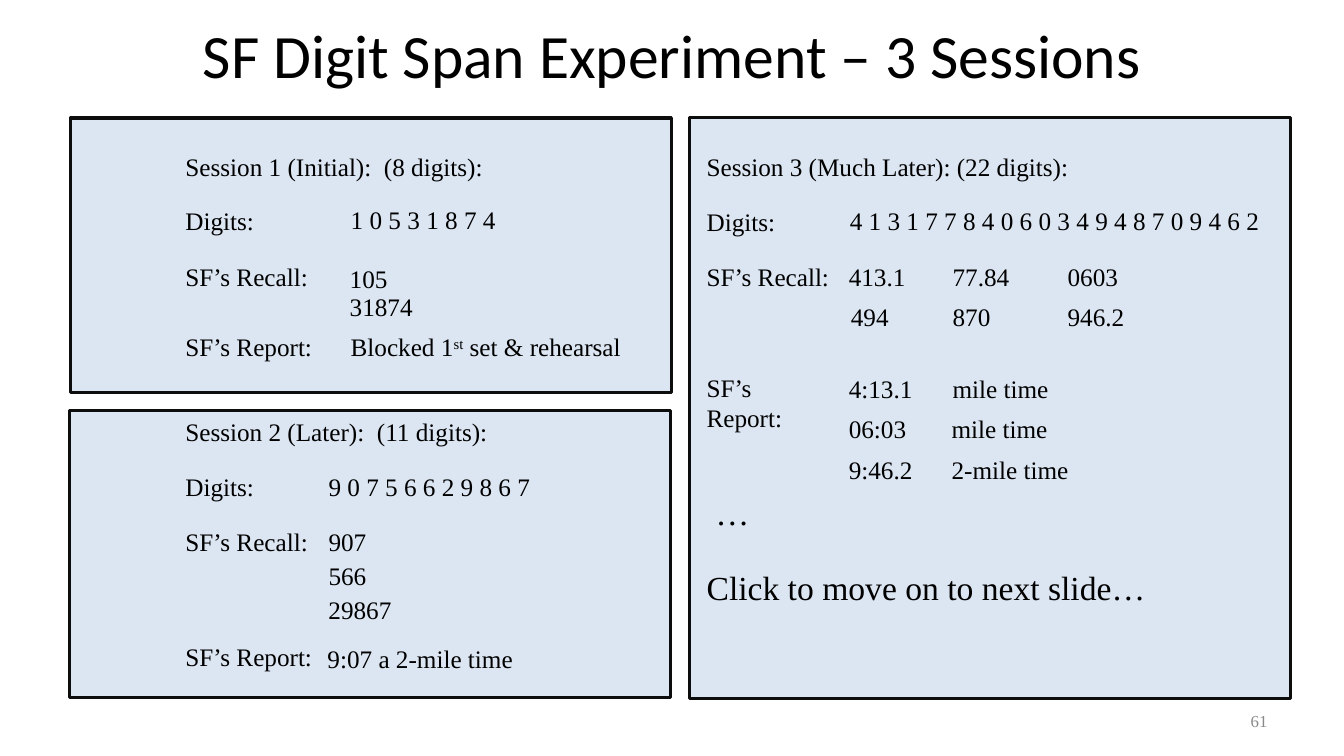
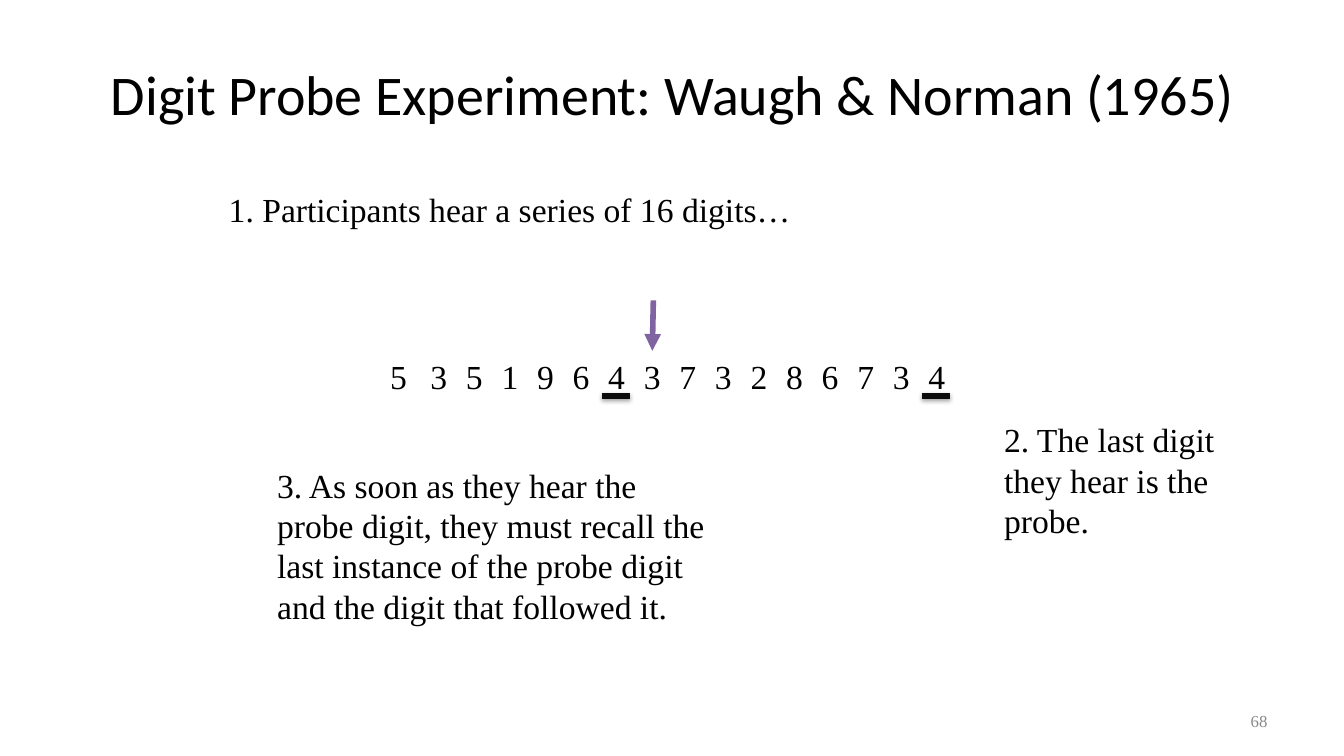
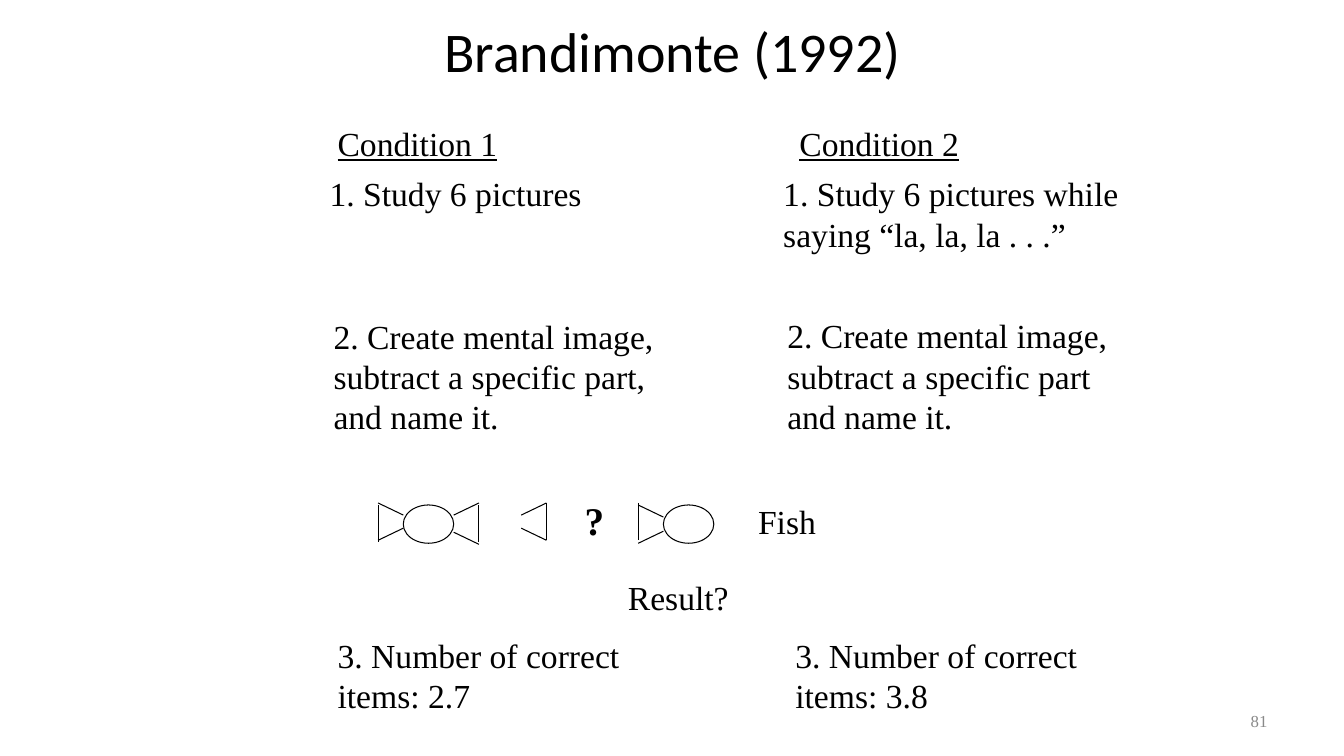
"""Build three slides on digit span, digit probe and mental imagery experiments."""
from lxml import etree
from pptx import Presentation
from pptx import util as u
from pptx.dml.color import RGBColor
from pptx.enum import shapes, text
from pptx.oxml.ns import qn

THEME = {
    "ink": "000000", "panel": "DCE6F2", "edge": "0D0D0D", "arrow": "8064A2", "muted": "898989",
    "head_font": "Calibri", "body_font": "Times New Roman",
    "small": 12, "detail": 18, "body": 24, "mark": 28, "title": 40, "big_title": 44,
}
TITLE = {"font": THEME["head_font"], "align": text.PP_ALIGN.CENTER, "anchor": text.MSO_ANCHOR.MIDDLE}
NUMBER = {"size": THEME["small"], "color": THEME["muted"], "align": text.PP_ALIGN.RIGHT,
          "anchor": text.MSO_ANCHOR.MIDDLE}
NUMBER_BOX = (9.56, 6.95, 3.11, 0.4)

PANELS = [(6.84, 1.17, 5.96, 5.76), (0.69, 4.07, 5.96, 2.85), (0.7, 1.17, 5.96, 2.72)]
LABEL_WIDTHS = {"Digits:": 0.89, "SF’s Recall:": 1.43, "SF’s Report:": 1.47}
SESSIONS = [
    {"left": 1.74, "top": 1.45, "width": 3.18, "name": "Session 1 (Initial):  (8 digits):",
     "labels": [(1.99, "Digits:"), (2.54, "SF’s Recall:"), (3.24, "SF’s Report:")],
     "values": [
         (3.38, 1.98, 1.65, "1 0 5 3 1 8 7 4"),
         (3.37, 2.56, 0.59, "105"),
         (3.37, 2.84, 0.84, "31874"),
         (3.38, 3.24, 2.91, ["Blocked 1", ("st", 30), " set & rehearsal"])]},
    {"left": 1.74, "top": 4.08, "width": 3.23, "name": "Session 2 (Later):  (11 digits):",
     "labels": [(4.63, "Digits:"), (5.17, "SF’s Recall:"), (6.31, "SF’s Report:")],
     "values": [
         (3.16, 4.63, 2.22, "9 0 7 5 6 6 2 9 8 6 7"),
         (3.16, 5.17, 0.59, "907"),
         (3.16, 5.51, 0.59, "566"),
         (3.16, 5.85, 0.84, "29867"),
         (3.15, 6.33, 2.07, "9:07 a 2-mile time")]},
    {"left": 6.91, "top": 1.45, "width": 3.83, "name": "Session 3 (Much Later): (22 digits):",
     "labels": [(2, "Digits:"), (2.54, "SF’s Recall:")],
     "values": [
         (8.33, 1.99, 4.3, "4 1 3 1 7 7 8 4 0 6 0 3 4 9 4 8 7 0 9 4 6 2"),
         (8.32, 2.54, 0.78, "413.1"), (9.35, 2.54, 0.78, "77.84"), (10.49, 2.54, 0.71, "0603"),
         (8.34, 2.94, 0.59, "494"), (9.35, 2.94, 0.59, "870"), (10.49, 2.94, 0.78, "946.2"),
         (8.32, 3.65, 0.85, "4:13.1"), (9.35, 3.65, 1.17, "mile time"),
         (8.32, 4.05, 0.78, "06:03"), (9.34, 4.05, 1.17, "mile time"),
         (8.32, 4.46, 0.85, "9:46.2"), (9.34, 4.46, 1.38, "2-mile time")]},
]
WRAPPED_REPORT = ((6.91, 3.64, 1.4, 0.71), "SF’s Report:")
SESSION_NOTES = [
    ((6.91, 5.58, 5.08, 0.5), "Click to move on to next slide…"),
    ((7, 4.83, 0.5, 0.5), "…"),
]

DIGITS = "5351964373286734"
PROBES = (6, 15)
PROBE_STEPS = [
    ((2.17, 1.83, 9.42, 0.5), "1. Participants hear a series of 16 digits…"),
    ((9.86, 4.11, 2.36, 1.31), "2. The last digit they hear is the probe."),
    ((2.65, 4.56, 4.51, 1.72), "3. As soon as they hear the probe digit, they must recall the "
                               "last instance of the probe digit and the digit that followed it."),
]

CONDITION_STEPS = [
    ((3.17, 1.67, 3.08, 1.08), "1. Study 6 pictures"),
    ((7.67, 1.67, 3.66, 1.08), "1. Study 6 pictures while saying “la, la, la . . .”"),
    ((3.21, 3.08, 3.54, 1.42), "2. Create mental image, subtract a specific part, and name it."),
    ((7.71, 3.08, 3.38, 1.5), "2. Create mental image, subtract a specific part and name it."),
    ((3.25, 6.25, 3.38, 0.92), "3. Number of correct items: 2.7"),
    ((7.79, 6.25, 3.38, 0.83), "3. Number of correct items: 3.8"),
]
CONDITIONS = [((3.25, 1.17, 2.58, 0.5), "Condition 1"), ((7.83, 1.17, 2.58, 0.5), "Condition 2")]
SHORT_LABELS = [
    ((5.7, 4.87, 0.4, 0.57), "?", {"size": THEME["mark"], "bold": True}),
    ((7.42, 4.92, 0.78, 0.5), "Fish", {}),
    ((6.13, 5.67, 1.2, 0.5), "Result?", {}),
]
FIGURES = [
    {"bodies": [4], "wings": [(3.75, 0.25, (5.01, 5.38), (4.99, 5.36)),
                              (4.75, -0.25, (5.01, 5.38), (4.99, 5.4))]},
    {"bodies": [], "wings": [(5.42, -0.25, (4.99, 5.36), (4.99, 5.36))]},
    {"bodies": [6.58], "wings": [(6.33, 0.25, (4.99, 5.36), (5.01, 5.39))]},
]


def inches(values):
    return [u.Inches(v) for v in values]


def add_text(slide, box, content, size=THEME["body"], font=THEME["body_font"], color=THEME["ink"],
             align=text.PP_ALIGN.LEFT, anchor=text.MSO_ANCHOR.TOP, wrap=True, **extra):
    tf = slide.shapes.add_textbox(*inches(box)).text_frame
    fit = text.MSO_AUTO_SIZE.NONE if wrap else text.MSO_AUTO_SIZE.SHAPE_TO_FIT_TEXT
    for name, value in {"word_wrap": wrap, "auto_size": fit, "vertical_anchor": anchor}.items():
        setattr(tf, name, value)
    p = tf.paragraphs[0]
    p.alignment = align
    for part in [content] if isinstance(content, str) else content:
        words, raised = (part, 0) if isinstance(part, str) else part
        r = p.add_run()
        r.text = words
        for name, value in {"size": u.Pt(size), "name": font, **extra}.items():
            setattr(r.font, name, value)
        r.font.color.rgb = RGBColor.from_string(color)
        if raised:
            r.font._element.set("baseline", str(raised * 1000))


def add_shape(parent, kind, box, fill, line, weight):
    sp = parent.shapes.add_shape(kind, *inches(box))
    sp.shadow.inherit = False
    if fill:
        sp.fill.solid()
        sp.fill.fore_color.rgb = RGBColor.from_string(fill)
    else:
        sp.fill.background()
    sp.line.color.rgb = RGBColor.from_string(line)
    sp.line.width = u.Pt(weight)
    return sp


def add_line(parent, start, end, color=THEME["ink"], weight=0.75, arrow=False):
    sp = parent.shapes.add_connector(shapes.MSO_CONNECTOR.STRAIGHT, *inches(start + end))
    sp.line.color.rgb = RGBColor.from_string(color)
    sp.line.width = u.Pt(weight)
    if arrow:
        etree.SubElement(sp.line._get_or_add_ln(), qn("a:tailEnd"), type="triangle")
    etree.SubElement(sp._element.spPr, qn("a:effectLst"))


def add_soft_shadow(sp):
    effects = sp._element.spPr.find(qn("a:effectLst"))
    shadow = etree.SubElement(effects, qn("a:outerShdw"), blurRad=str(u.Pt(3.1)),
                              dist=str(u.Pt(1.8)), dir="5400000", rotWithShape="0")
    color = etree.SubElement(shadow, qn("a:srgbClr"), val=THEME["ink"])
    etree.SubElement(color, qn("a:alpha"), val="35000")


def new_slide(prs, title, box, size, number):
    slide = prs.slides.add_slide(prs.slide_layouts[6])
    add_text(slide, box, title, size=size, **TITLE)
    add_text(slide, NUMBER_BOX, number, **NUMBER)
    return slide


def build_span(prs):
    slide = new_slide(prs, "SF Digit Span Experiment – 3 Sessions", (0.92, 0.09, 11.5, 0.89),
                      THEME["big_title"], "61")
    for box in PANELS:
        add_shape(slide, shapes.MSO_SHAPE.RECTANGLE, box, THEME["panel"], THEME["edge"], 2.25)
    for session in SESSIONS:
        left = session["left"]
        cells = [(left, session["top"], session["width"], session["name"])]
        cells += [(left, y, LABEL_WIDTHS[label], label) for y, label in session["labels"]]
        for x, y, width, words in cells + session["values"]:
            add_text(slide, (x, y, width, 0.4), words, size=THEME["detail"], wrap=False)
    add_text(slide, *WRAPPED_REPORT, size=THEME["detail"])
    for box, words in SESSION_NOTES:
        add_text(slide, box, words)


def build_probe(prs):
    slide = new_slide(prs, "Digit Probe Experiment: Waugh & Norman (1965)", (0.67, 0.3, 12, 1.25),
                      THEME["title"], "68")
    pitch = (9.11 - 4.17) / 14
    lefts = [3.77] + [4.17 + i * pitch for i in range(len(DIGITS) - 1)]
    for left, digit in zip(lefts, DIGITS):
        add_text(slide, (left, 3.48, 0.75, 0.5), digit)
    for i in PROBES:
        bar = add_shape(slide, shapes.MSO_SHAPE.RECTANGLE, (lefts[i] + 0.04, 3.9, 0.27, 0.05),
                        THEME["edge"], THEME["edge"], 0.75)
        add_soft_shadow(bar)
    add_line(slide, (6.48, 2.98), (6.47, 3.48), THEME["arrow"], 4, arrow=True)
    for box, words in PROBE_STEPS:
        add_text(slide, box, words)


def build_imagery(prs):
    slide = new_slide(prs, "Brandimonte (1992)", (2.42, 0.08, 8.5, 0.83), THEME["title"], "81")
    for box, words in CONDITION_STEPS:
        add_text(slide, box, words)
    for box, words in CONDITIONS:
        add_text(slide, box, words, underline=True)
    for box, words, style in SHORT_LABELS:
        add_text(slide, box, words, wrap=False, **style)
    for figure in FIGURES:
        group = slide.shapes.add_group_shape()
        for x, reach, (top, bottom), (high, low) in figure["wings"]:
            add_line(group, (x, top), (x, bottom))
            add_line(group, (x, high), (x + reach, high + 0.12))
            add_line(group, (x, low), (x + reach, low - 0.12))
        for left in figure["bodies"]:
            add_shape(group, shapes.MSO_SHAPE.OVAL, (left, 5.01, 0.5, 0.38), None, THEME["ink"], 0.75)


def main():
    prs = Presentation()
    prs.slide_width, prs.slide_height = inches((13.33, 7.5))
    for build in (build_span, build_probe, build_imagery):
        build(prs)
    prs.save("out.pptx")


if __name__ == "__main__":
    main()
